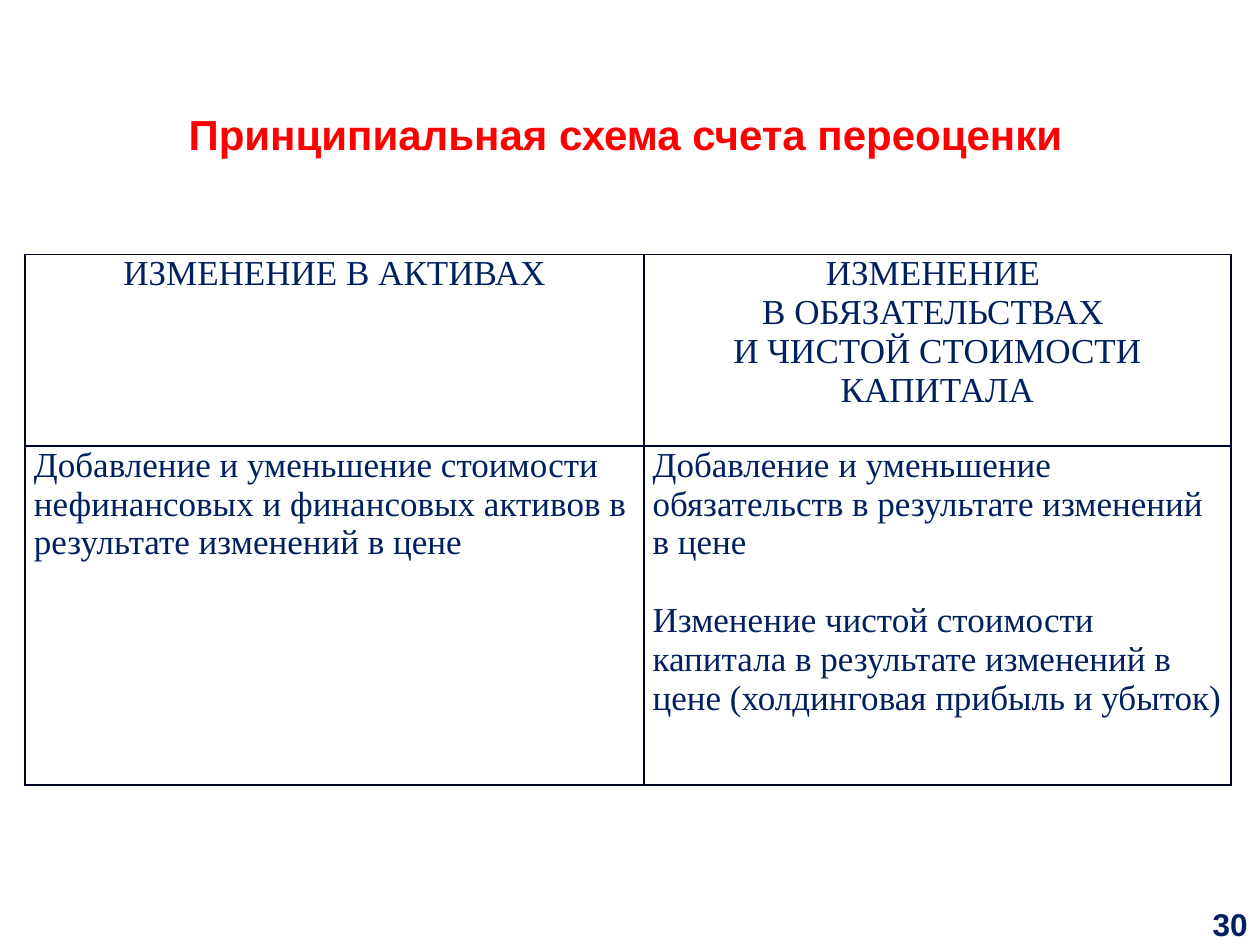
from dataclasses import dataclass

from pptx import Presentation
from pptx.dml.color import RGBColor
from pptx.enum.text import MSO_ANCHOR as Anchor, PP_ALIGN as Align
from pptx.oxml import parse_xml
from pptx.oxml.ns import nsdecls
from pptx.util import Inches, Pt


@dataclass(frozen=True)
class Theme:
    """Colours, fonts and type sizes of the slide."""
    title: str = "FF0000"
    text: str = "002060"
    border: str = "00062B"
    sans: str = "Arial"
    serif: str = "Times New Roman"
    title_size: int = 24
    body_size: int = 20
    number_size: int = 18


THEME = Theme()
HEADINGS = (
    "ИЗМЕНЕНИЕ В АКТИВАХ",
    "ИЗМЕНЕНИЕ \vВ ОБЯЗАТЕЛЬСТВАХ \vИ ЧИСТОЙ СТОИМОСТИ КАПИТАЛА",
)
ENTRIES = (
    "Добавление и уменьшение стоимости нефинансовых и финансовых активов "
    "в результате изменений в цене",
    "Добавление и уменьшение обязательств в результате изменений в цене\n"
    "Изменение чистой стоимости капитала в результате изменений в цене "
    "(холдинговая прибыль и убыток)",
)


def write(frame, text, font, size, color, align, bold=False):
    """Fill a text frame and format all its runs."""
    frame.text = text
    frame.word_wrap = True
    for index, para in enumerate(frame.paragraphs):
        para.alignment = align
        para.space_before = Pt(22 if index else 0)
        for span in para.runs:
            span.font.name = font
            span.font.size = Pt(size)
            span.font.bold = bold
            span.font.color.rgb = RGBColor.from_string(color)


def add_title(page, text):
    """Place and format the title placeholder."""
    box = page.shapes.title
    box.left, box.top = Inches(0.16), Inches(0.81)
    box.width, box.height = Inches(9.61), Inches(0.5)
    box.text_frame.vertical_anchor = Anchor.TOP
    write(box.text_frame, text, THEME.sans, THEME.title_size, THEME.title,
          Align.CENTER, bold=True)


def add_page_number(page, text):
    """Add the page number in the bottom right corner."""
    box = page.shapes.add_textbox(Inches(9.49), Inches(7.14), Inches(0.51), Inches(0.39))
    box.text_frame.vertical_anchor = Anchor.BOTTOM
    write(box.text_frame, text, THEME.sans, THEME.number_size, THEME.text,
          Align.RIGHT, bold=True)


def set_borders(cell):
    """Draw a thin line on each side of a table cell."""
    properties = cell._tc.get_or_add_tcPr()
    for index, side in enumerate(("lnL", "lnR", "lnT", "lnB")):
        properties.insert(index, parse_xml(
            f'<a:{side} {nsdecls("a")} w="{Pt(1)}"><a:solidFill>'
            f'<a:srgbClr val="{THEME.border}"/></a:solidFill></a:{side}>'))


def add_account_table(page):
    """Add the two-column revaluation account."""
    widths, heights = (4.91, 4.66), (1.52, 2.69)
    table = page.shapes.add_table(
        len(heights), len(widths), Inches(0.2), Inches(2.02),
        Inches(sum(widths)), Inches(sum(heights))).table
    table.first_row = table.horz_banding = False
    for column, width in zip(table.columns, widths):
        column.width = Inches(width)
    rows = zip(table.rows, heights, (HEADINGS, ENTRIES), (Align.CENTER, Align.LEFT))
    for row, height, texts, align in rows:
        row.height = Inches(height)
        for cell, text in zip(row.cells, texts):
            cell.margin_left = cell.margin_right = Inches(0.07)
            cell.margin_top = cell.margin_bottom = 0
            cell.fill.background()
            set_borders(cell)
            write(cell.text_frame, text, THEME.serif, THEME.body_size, THEME.text, align)


def main():
    """Build and save the slide."""
    deck = Presentation()
    deck.slide_width, deck.slide_height = Inches(10), Inches(7.5)
    page = deck.slides.add_slide(deck.slide_layouts[5])
    add_page_number(page, "30")
    add_title(page, "Принципиальная схема счета переоценки")
    add_account_table(page)
    deck.save("out.pptx")


if __name__ == "__main__":
    main()
